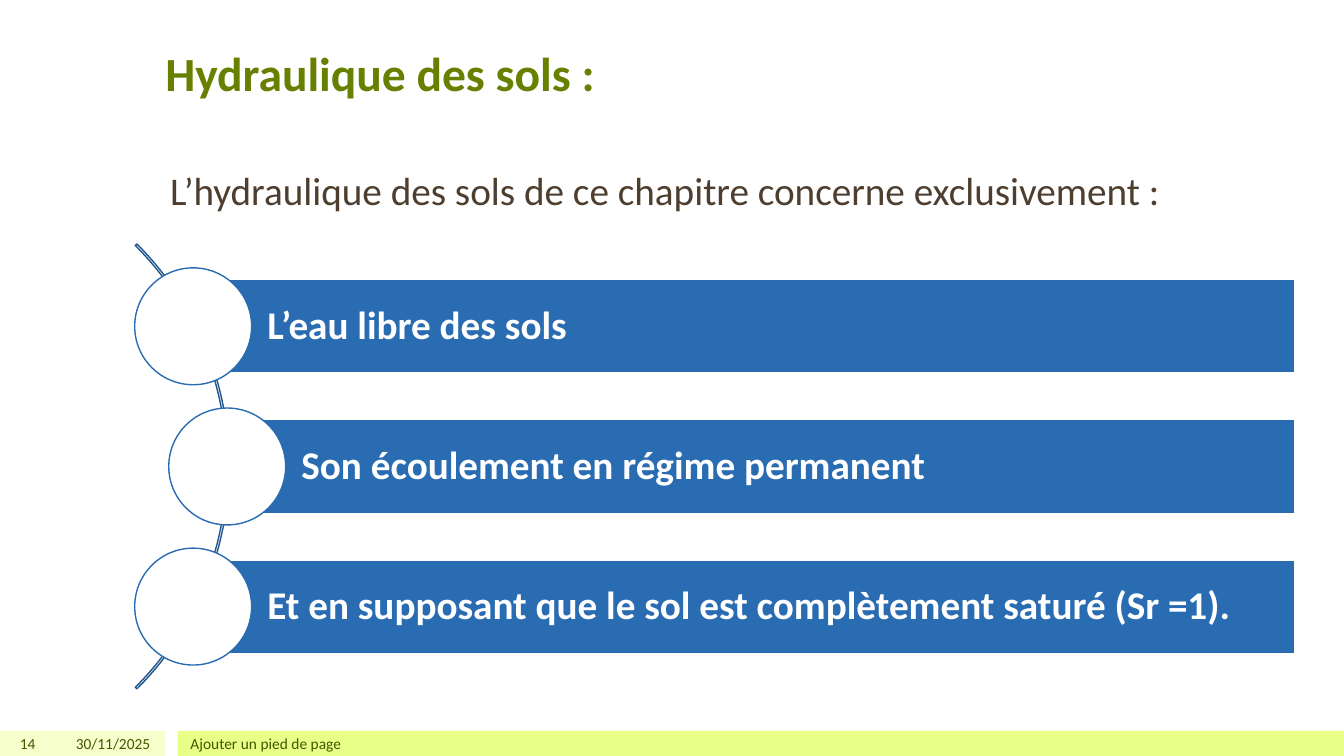
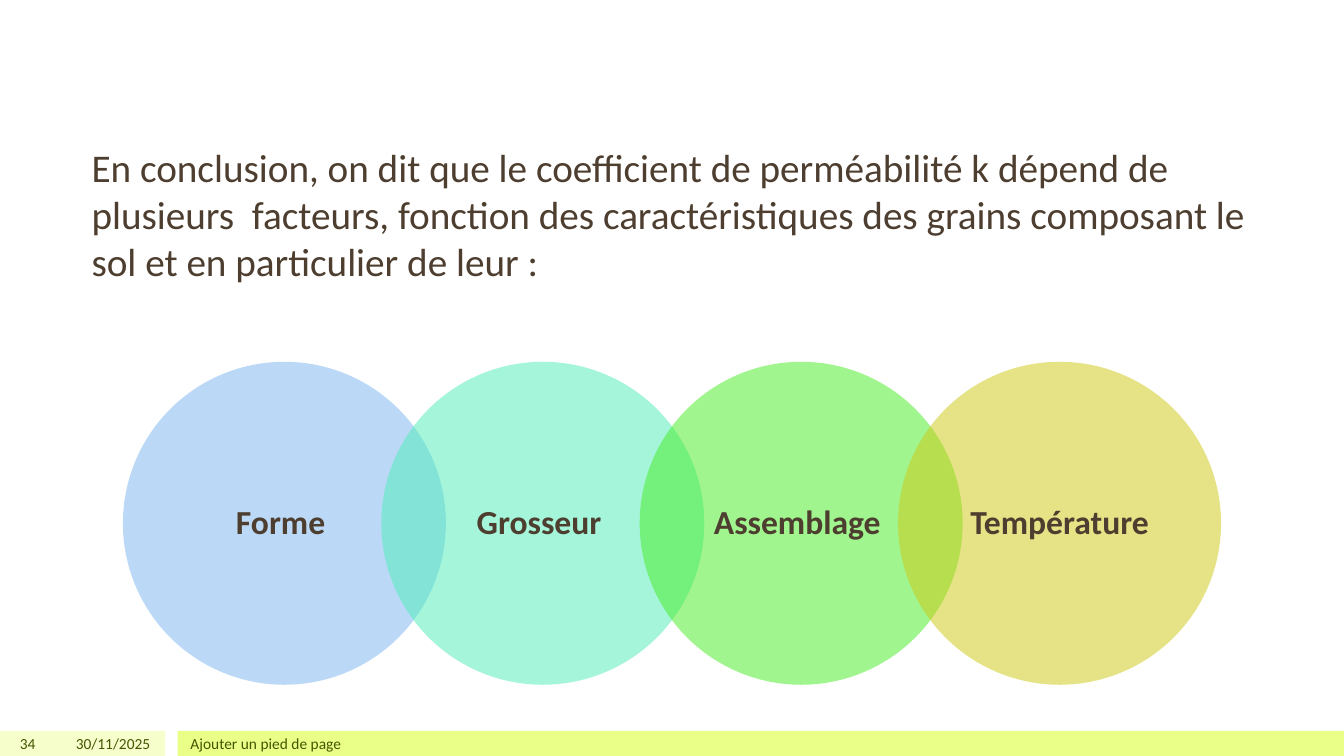
from dataclasses import dataclass

from pptx import Presentation
from pptx.dml.color import RGBColor
from pptx.enum import shapes, text
from pptx.oxml.xmlchemy import OxmlElement
from pptx.util import Pt

SHAPE = shapes.MSO_SHAPE
ANCHOR = text.MSO_ANCHOR
ALIGN = text.PP_ALIGN


@dataclass(frozen=True)
class Theme:
    font: str = "Calibri"
    title: str = "688000"
    body: str = "4D3E2F"
    footer: str = "455500"
    white: str = "FFFFFF"
    band_light: str = "F6FFCC"
    band: str = "E9FF88"
    bar: str = "2A6CB2"
    arc: str = "22568F"
    circles: tuple = ("79B4F0", "4DEDB7", "45EC1F", "CDC80F")
    title_size: int = 34
    body_size: int = 28
    label_size: int = 24
    footer_size: int = 11


T = Theme()
WIDTH, HEIGHT = 960, 540
INSETS = (7.2, 3.6, 7.2, 3.6)
DATE = "30/11/2025"
FOOTER = "Ajouter un pied de page"


def write(sp, content, size, color, bold=False, align=ALIGN.LEFT,
          anchor=ANCHOR.TOP, spacing=1.0, insets=INSETS):
    tf = sp.text_frame
    left, top, right, bottom = map(Pt, insets)
    frame_format = dict(word_wrap=True, vertical_anchor=anchor, margin_left=left,
                        margin_top=top, margin_right=right, margin_bottom=bottom)
    for name, value in frame_format.items():
        setattr(tf, name, value)
    p = tf.paragraphs[0]
    p.alignment, p.line_spacing = align, spacing
    r = p.add_run()
    r.text = content
    for name, value in dict(name=T.font, size=Pt(size), bold=bold).items():
        setattr(r.font, name, value)
    r.font.color.rgb = RGBColor.from_string(color)


def add_text(s, box, content, size, color, **options):
    write(s.shapes.add_textbox(*map(Pt, box)), content, size, color, **options)


def add_shape(s, kind, box, fill=None, line=None):
    sp = s.shapes.add_shape(kind, *map(Pt, box))
    sp.shadow.inherit = False
    if fill:
        sp.fill.solid()
        sp.fill.fore_color.rgb = RGBColor.from_string(fill)
    else:
        sp.fill.background()
    if line:
        sp.line.color.rgb = RGBColor.from_string(line)
        sp.line.width = Pt(1)
    else:
        sp.line.fill.background()
    return sp


def set_opacity(sp, percent):
    alpha = OxmlElement("a:alpha")
    alpha.set("val", str(percent * 1000))
    sp.fill._xPr.find(".//{*}srgbClr").append(alpha)


def add_slide(prs, number):
    """Add a blank slide with the footer bands, number, date and footer text."""
    s = prs.slides.add_slide(prs.slide_layouts[6])
    top, height = 522, 18
    for left, width, color in ((0, 118, T.band_light), (127, WIDTH - 127, T.band)):
        add_shape(s, SHAPE.RECTANGLE, (left, top, width, height), color)
    for left, width, content, align in ((0, 32.4, str(number), ALIGN.RIGHT),
                                        (36, 78.5, DATE, ALIGN.RIGHT),
                                        (129, 720, FOOTER, ALIGN.LEFT)):
        add_text(s, (left, top, width, height), content, T.footer_size, T.footer,
                 align=align, anchor=ANCHOR.MIDDLE)
    return s


def add_curved_list(s, items):
    """Draw bars whose round markers follow an arc, the middle one pushed right."""
    center_y, pitch, right = 333.2, 100.1, 925
    arc_size, bar_height, marker = 449.4, 66.8, 83.5
    arc = add_shape(s, SHAPE.BLOCK_ARC,
                    (-285.8, center_y - arc_size / 2, arc_size, arc_size), line=T.arc)
    for i, value in enumerate((189, 27, 0.0035)):
        arc.adjustments[i] = value
    middle = len(items) // 2
    for i, item in enumerate(items):
        left = 162.3 if i == middle else 138
        y = center_y + (i - middle) * pitch
        bar = add_shape(s, SHAPE.RECTANGLE,
                        (left, y - bar_height / 2, right - left, bar_height),
                        T.bar, T.white)
        write(bar, item, T.body_size, T.white, bold=True, anchor=ANCHOR.MIDDLE,
              spacing=0.9, insets=(53, 5.8, 5.8, 5.8))
        add_shape(s, SHAPE.OVAL, (left - marker / 2, y - marker / 2, marker, marker),
                  T.white, T.bar)


def add_linear_venn(s, labels):
    """Draw a row of translucent circles, each overlapping the last by a fifth."""
    left, top, size = 87.8, 258.4, 230.7
    for i, (label, color) in enumerate(zip(labels, T.circles)):
        sp = add_shape(s, SHAPE.OVAL, (left + i * 0.8 * size, top, size, size), color)
        set_opacity(sp, 50)
        write(sp, label, T.label_size, T.body, bold=True, align=ALIGN.CENTER,
              anchor=ANCHOR.MIDDLE, spacing=0.9, insets=(13, 2, 13, 2))


def build_hydraulics(prs):
    s = add_slide(prs, 14)
    add_text(s, (111, 21.6, 738, 54), "Hydraulique des sols :", T.title_size, T.title,
             bold=True, anchor=ANCHOR.BOTTOM)
    add_text(s, (114.5, 98.6, 765, 67.7),
             "L’hydraulique des sols de ce chapitre concerne exclusivement :",
             T.body_size, T.body, spacing=1.5)
    add_curved_list(s, ("L’eau libre des sols",
                        "Son écoulement en régime permanent",
                        "Et en supposant que le sol est complètement saturé (Sr =1)."))


def build_conclusion(prs):
    s = add_slide(prs, 34)
    add_linear_venn(s, ("Forme ", "Grosseur ", "Assemblage ", "Température"))
    add_text(s, (58.3, 98.6, 843, 108.7),
             "En conclusion, on dit que le coefficient de perméabilité k dépend de "
             "plusieurs  facteurs, fonction des caractéristiques des grains composant "
             "le sol et en particulier de leur :", T.body_size, T.body)


def main():
    prs = Presentation()
    prs.slide_width, prs.slide_height = Pt(WIDTH), Pt(HEIGHT)
    build_hydraulics(prs)
    build_conclusion(prs)
    prs.save("out.pptx")


if __name__ == "__main__":
    main()
